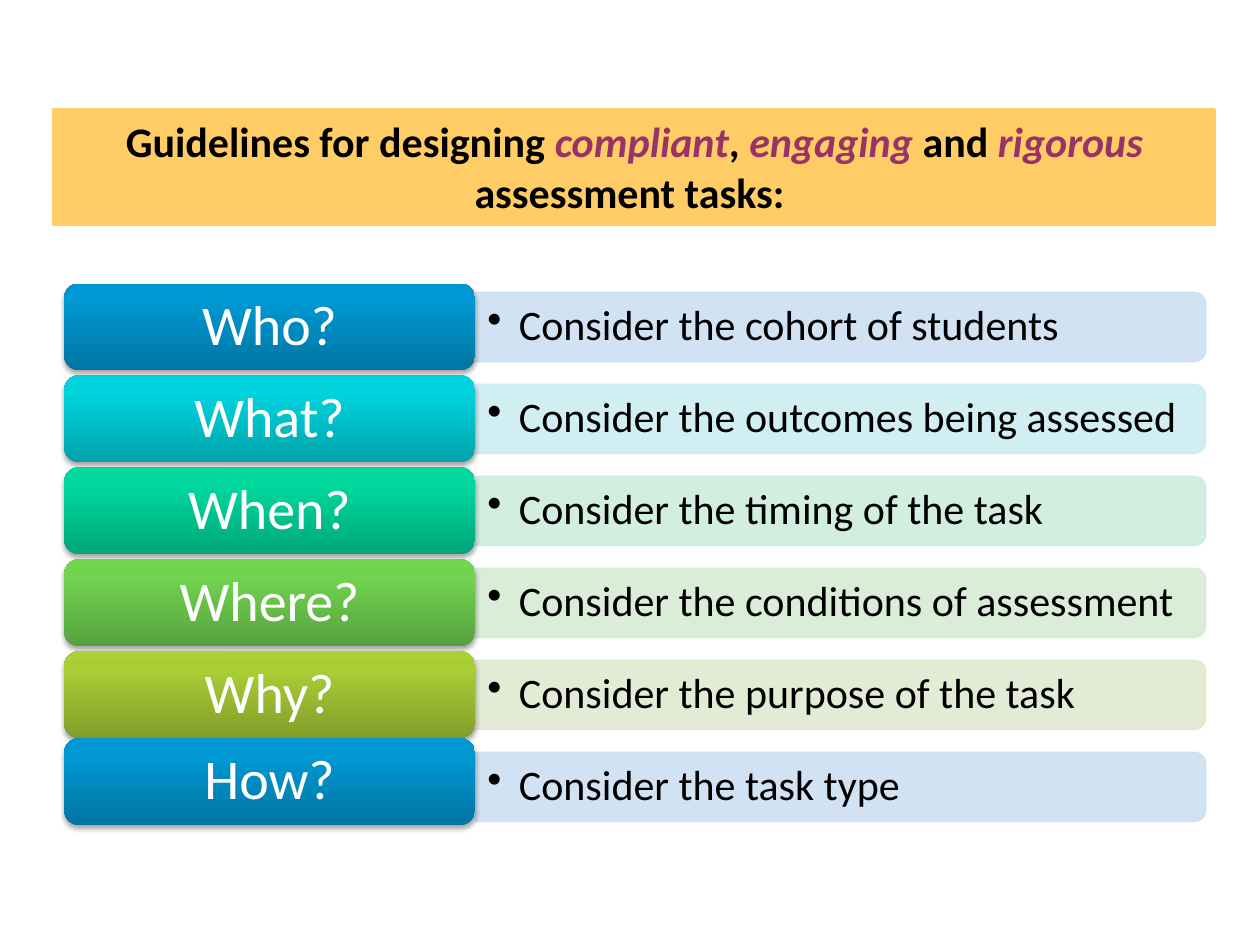
from lxml import etree
from pptx import Presentation
from pptx import util as u
from pptx.dml.color import RGBColor
from pptx.enum import shapes, text
from pptx.oxml import parse_xml
from pptx.oxml.ns import nsdecls, qn

ROWS = [  # question, advice, panel tint, gradient from bottom to top
    ("Who?", "Consider the cohort of students", "CCDFF1", ("0075A2", "0098D2", "0099D3")),
    ("What?", "Consider the outcomes being assessed", "CCEEF1", ("00A3AA", "00D3DD", "00D4DE")),
    ("When?", "Consider the timing of the task", "CCEDDE", ("00A679", "00D89D", "00D99E")),
    ("Where?", "Consider the conditions of assessment", "D7ECD3", ("57A23D", "71D350", "70D64E")),
    ("Why?", "Consider the purpose of the task", "E1E9D0", ("829E29", "A9CE35", "ABD132")),
    ("How?", "Consider the task type", "CCDFF1", ("0075A2", "0098D2", "0099D3")),
]
HEADING = [
    ("Guidelines for designing ", False), ("compliant", True), (", ", False),
    ("engaging", True), (" and ", False), ("rigorous", True),
    (" assessment tasks: ", False),
]
ROW_TOP, ROW_PITCH = 2.25, 0.73
BUTTON_HEIGHT = 0.69
PANEL_LEFT, PANEL_LENGTH, PANEL_HEIGHT = 3.77, 5.8, 0.55


def rgb(value):
    return RGBColor.from_string(value)


def style_run(run, size, color):
    run.font.name = "Calibri"
    run.font.size = u.Pt(size)
    run.font.color.rgb = rgb(color)


prs = Presentation()
prs.slide_width, prs.slide_height = u.Inches(10), u.Inches(7.5)
slide = prs.slides.add_slide(prs.slide_layouts[6])

for index, (question, advice, tint, gradient) in enumerate(ROWS):
    top = ROW_TOP + index * ROW_PITCH
    middle = top + BUTTON_HEIGHT / 2

    # A quarter turn puts the two rounded corners on the right
    panel = slide.shapes.add_shape(
        shapes.MSO_SHAPE.ROUND_2_SAME_RECTANGLE,
        u.Inches(PANEL_LEFT + (PANEL_LENGTH - PANEL_HEIGHT) / 2),
        u.Inches(middle - PANEL_LENGTH / 2),
        u.Inches(PANEL_HEIGHT), u.Inches(PANEL_LENGTH))
    panel.rotation = 90
    panel.shadow.inherit = False
    panel.fill.solid()
    panel.fill.fore_color.rgb = rgb(tint)
    panel.line.color.rgb = rgb(tint)
    panel.line.width = u.Pt(0.75)
    for color in panel._element.spPr.iter(qn("a:srgbClr")):
        etree.SubElement(color, qn("a:alpha"), val="90000")

    advice_box = slide.shapes.add_textbox(
        u.Inches(PANEL_LEFT), u.Inches(middle - 0.25), u.Inches(5.77), u.Inches(0.5))
    frame = advice_box.text_frame
    frame.word_wrap = True
    frame.vertical_anchor = text.MSO_ANCHOR.MIDDLE
    frame.text = advice
    paragraph = frame.paragraphs[0]
    paragraph.level = 1
    paragraph.line_spacing = 0.9
    properties = paragraph._p.get_or_add_pPr()
    properties.set("marL", str(u.Inches(0.25)))
    properties.set("indent", str(-u.Inches(0.25)))
    etree.SubElement(properties, qn("a:buChar"), char="•")
    style_run(paragraph.runs[0], 24, "000000")

    # The last button sits slightly higher than the even spacing
    button_top = 5.86 if index == len(ROWS) - 1 else top
    button = slide.shapes.add_shape(
        shapes.MSO_SHAPE.ROUNDED_RECTANGLE,
        u.Inches(0.51), u.Inches(button_top), u.Inches(3.26), u.Inches(BUTTON_HEIGHT))
    button.line.fill.background()
    stops = "".join(
        f'<a:gs pos="{position}"><a:srgbClr val="{color}"/></a:gs>'
        for position, color in zip((0, 80000, 100000), gradient))
    outline = button._element.spPr.find(qn("a:ln"))
    outline.addprevious(parse_xml(
        f'<a:gradFill {nsdecls("a")} rotWithShape="1"><a:gsLst>{stops}</a:gsLst>'
        '<a:lin ang="16200000" scaled="0"/></a:gradFill>'))
    outline.addnext(parse_xml(
        f'<a:effectLst {nsdecls("a")}><a:outerShdw blurRad="{u.Pt(3.1)}" '
        f'dist="{u.Pt(1.8)}" dir="5400000" rotWithShape="0"><a:srgbClr val="000000">'
        '<a:alpha val="35000"/></a:srgbClr></a:outerShdw></a:effectLst>'))
    frame = button.text_frame
    frame.word_wrap = True
    frame.vertical_anchor = text.MSO_ANCHOR.MIDDLE
    frame.margin_left = frame.margin_right = u.Inches(0.13)
    frame.margin_top = frame.margin_bottom = u.Inches(0.07)
    frame.text = question
    paragraph = frame.paragraphs[0]
    paragraph.alignment = text.PP_ALIGN.CENTER
    paragraph.line_spacing = 0.9
    style_run(paragraph.runs[0], 32, "FFFFFF")

heading = slide.shapes.add_shape(
    shapes.MSO_SHAPE.RECTANGLE,
    u.Inches(0.43), u.Inches(0.87), u.Inches(9.21), u.Inches(0.91))
heading.shadow.inherit = False
heading.fill.solid()
heading.fill.fore_color.rgb = rgb("FFCC66")
heading.line.color.rgb = rgb("FFCC66")
heading.line.width = u.Pt(2)
frame = heading.text_frame
frame.word_wrap = True
frame.auto_size = text.MSO_AUTO_SIZE.SHAPE_TO_FIT_TEXT
frame.vertical_anchor = text.MSO_ANCHOR.TOP
paragraph = frame.paragraphs[0]
paragraph.alignment = text.PP_ALIGN.CENTER
for words, emphasized in HEADING:
    run = paragraph.add_run()
    run.text = words
    style_run(run, 24, "993366" if emphasized else "000000")
    run.font.bold = True
    run.font.italic = emphasized

prs.save("out.pptx")
